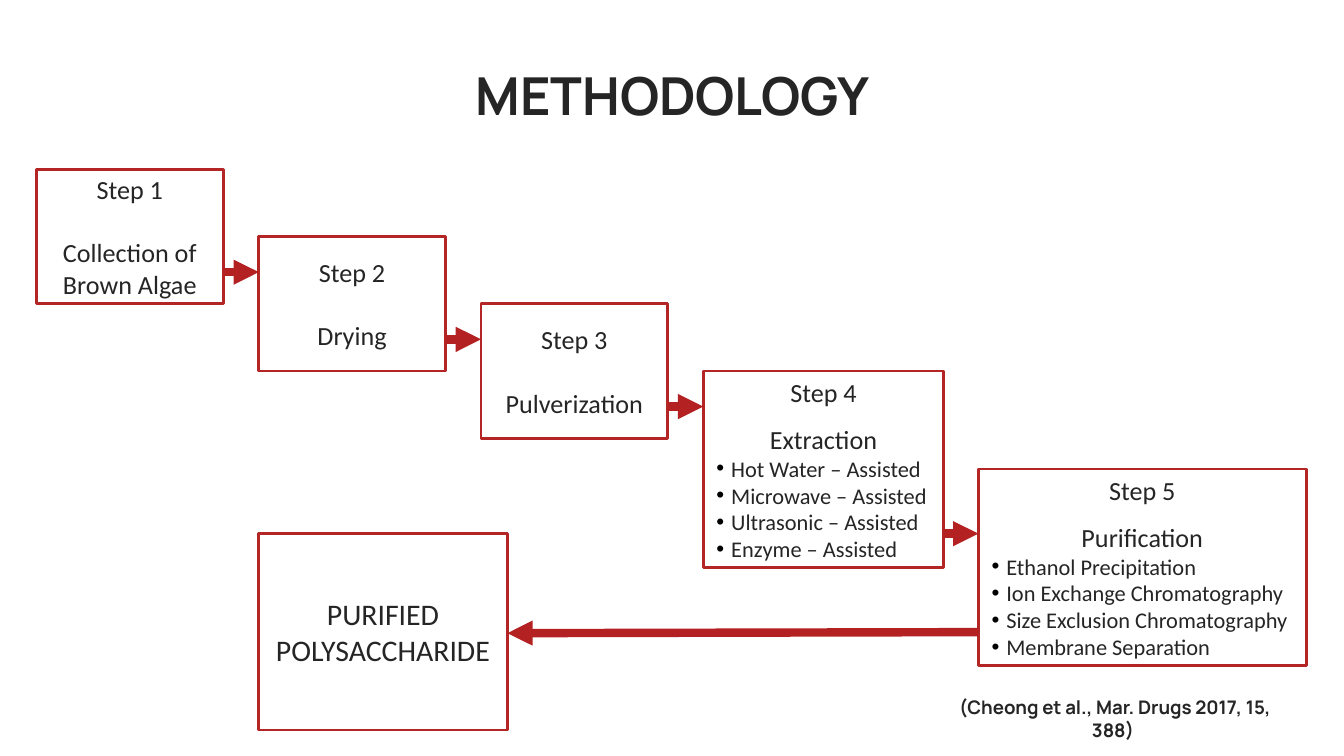
from lxml import etree
from pptx import Presentation
from pptx.dml.color import RGBColor
from pptx.enum.shapes import MSO_CONNECTOR as Connector, MSO_SHAPE as Shape
from pptx.enum.text import MSO_ANCHOR as Anchor, MSO_AUTO_SIZE as AutoSize, PP_ALIGN as Align
from pptx.oxml.ns import qn
from pptx.util import Cm, Pt

WHITE = RGBColor(0xFF, 0xFF, 0xFF)
INK = RGBColor(0x25, 0x25, 0x25)
BORDER = RGBColor(0xB4, 0x25, 0x26)
ARROW = RGBColor(0xB4, 0x21, 0x22)

# Staircase of steps, in centimetres
FIRST_LEFT, FIRST_TOP = 0.69, 3.2
STEP_RIGHT, STEP_DOWN = 4.2, 1.27
SMALL_WIDTH, SMALL_HEIGHT = 3.53, 2.54
TALL_HEIGHT = 3.71

SIMPLE_STEPS = ["Collection of Brown Algae", "Drying", "Pulverization"]
EXTRACTION = ["Hot Water – Assisted", "Microwave – Assisted",
              "Ultrasonic – Assisted", "Enzyme – Assisted"]
PURIFICATION = ["Ethanol Precipitation", "Ion Exchange Chromatography",
                "Size Exclusion Chromatography", "Membrane Separation"]


def write(paragraph, text, size, font="Calibri", bold=False, align=Align.CENTER):
    paragraph.alignment = align
    run = paragraph.add_run()
    run.text = text
    run.font.name = font
    run.font.size = Pt(size)
    run.font.bold = bold
    run.font.color.rgb = INK


def add_bullet(paragraph):
    properties = paragraph._p.get_or_add_pPr()
    properties.set("marL", str(Cm(0.28)))
    properties.set("indent", str(-Cm(0.28)))
    color = etree.SubElement(properties, qn("a:buClr"))
    etree.SubElement(color, qn("a:srgbClr"), val="000000")
    etree.SubElement(properties, qn("a:buFont"), typeface="Arial")
    etree.SubElement(properties, qn("a:buChar"), char="•")


def add_box(slide, left, top, width, height):
    box = slide.shapes.add_shape(Shape.RECTANGLE, Cm(left), Cm(top), Cm(width), Cm(height))
    box.shadow.inherit = False
    box.fill.solid()
    box.fill.fore_color.rgb = WHITE
    box.line.color.rgb = BORDER
    box.line.width = Pt(1.5)
    box.text_frame.word_wrap = True
    box.text_frame.vertical_anchor = Anchor.MIDDLE
    return box


def add_step(slide, number, name, left, top, width, height, methods=()):
    box = add_box(slide, left, top, width, height)
    frame = box.text_frame
    write(frame.paragraphs[0], f"Step {number}", 14)
    heading = frame.add_paragraph()
    if methods:
        heading.line_spacing = 1.5
    else:
        heading.space_before = Pt(17)
    write(heading, name, 14)
    for method in methods:
        item = frame.add_paragraph()
        add_bullet(item)
        write(item, method, 12, align=Align.LEFT)
    return box


def add_arrow(slide, start_x, start_y, end_x, end_y):
    arrow = slide.shapes.add_connector(Connector.STRAIGHT, start_x, start_y, end_x, end_y)
    arrow.line.color.rgb = ARROW
    arrow.line.width = Pt(4.5)
    etree.SubElement(arrow.line._get_or_add_ln(), qn("a:tailEnd"), type="triangle")
    etree.SubElement(arrow._element.spPr, qn("a:effectLst"))


def add_heading_text(shape, text, size):
    frame = shape.text_frame
    frame.word_wrap = True
    frame.auto_size = AutoSize.NONE
    frame.vertical_anchor = Anchor.BOTTOM
    frame.margin_left = frame.margin_right = Cm(0.25)
    frame.margin_top = frame.margin_bottom = Cm(0.25)
    write(frame.paragraphs[0], text, size, "Manrope", bold=True)


def main():
    prs = Presentation()
    prs.slide_width, prs.slide_height = Cm(25.4), Cm(14.28)
    slide = prs.slides.add_slide(prs.slide_layouts[5])

    # Title
    title = slide.shapes.title
    title.left, title.top, title.width, title.height = Cm(6.07), Cm(0.86), Cm(13.28), Cm(1.78)
    add_heading_text(title, "METHODOLOGY", 28)

    # Steps
    steps = [add_step(slide, i + 1, name, FIRST_LEFT + i * STEP_RIGHT, FIRST_TOP + i * STEP_DOWN,
                      SMALL_WIDTH, SMALL_HEIGHT)
             for i, name in enumerate(SIMPLE_STEPS)]
    steps.append(add_step(slide, 4, "Extraction", FIRST_LEFT + 3 * STEP_RIGHT,
                          FIRST_TOP + 3 * STEP_DOWN, 4.55, TALL_HEIGHT, EXTRACTION))
    purification = add_step(slide, 5, "Purification", 18.49, 8.86, 6.2, TALL_HEIGHT, PURIFICATION)
    steps.append(purification)

    # Arrows from each step to the next
    for step, following, drop in zip(steps, steps[1:], [0.67, 0.67, 0.67, 1.22]):
        y = following.top + Cm(drop)
        add_arrow(slide, step.left + step.width, y, following.left, y)

    # Final product
    product = add_box(slide, FIRST_LEFT + STEP_RIGHT, 10.08, 4.7, TALL_HEIGHT)
    write(product.text_frame.paragraphs[0], "PURIFIED POLYSACCHARIDE", 16)
    add_arrow(slide, purification.left, Cm(11.94), product.left + product.width, Cm(11.96))

    # Citation
    citation = slide.shapes.add_textbox(Cm(17.45), Cm(13.21), Cm(7.24), Cm(1.04))
    add_heading_text(citation, "(Cheong et al., Mar. Drugs 2017, 15, 388) ", 10)

    prs.save("out.pptx")


if __name__ == "__main__":
    main()
